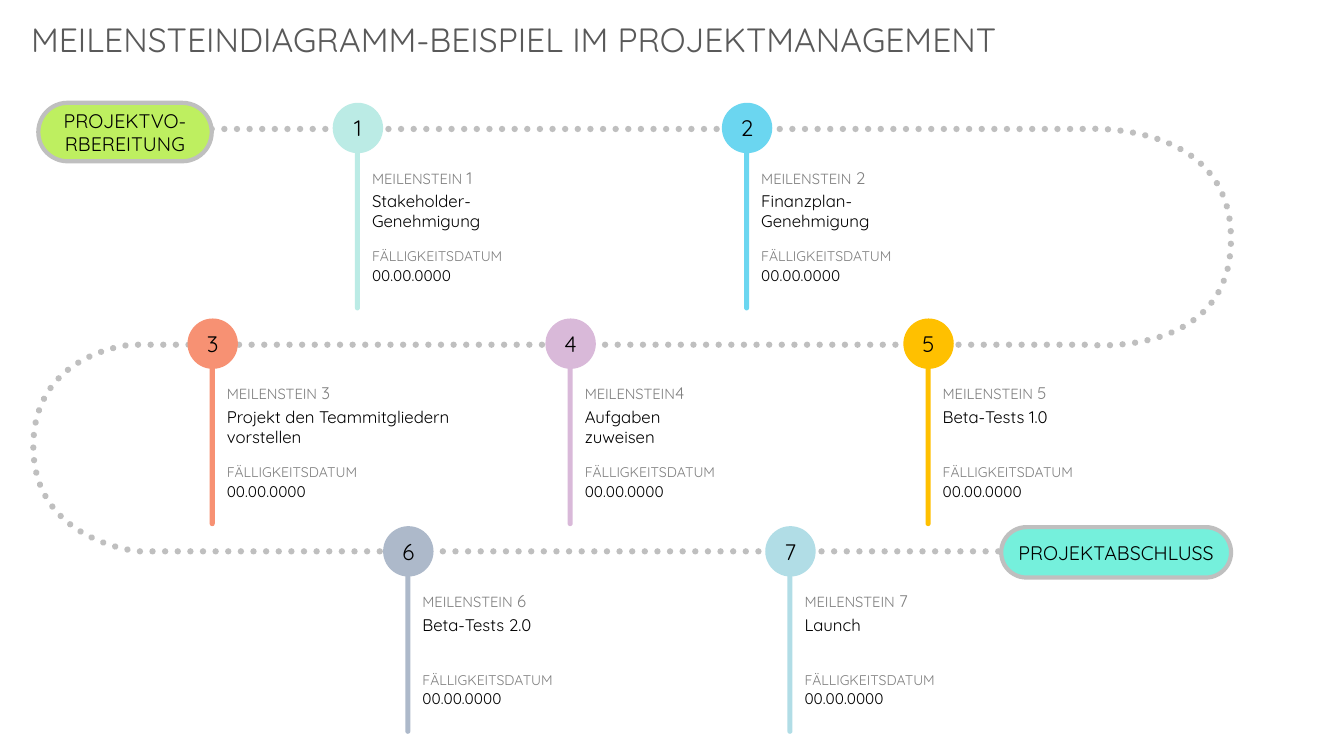
from lxml import etree
from pptx import Presentation
from pptx.dml.color import RGBColor
from pptx.enum.dml import MSO_LINE
from pptx.enum.shapes import MSO_SHAPE
from pptx.enum.text import MSO_ANCHOR, PP_ALIGN
from pptx.util import Inches, Pt

ROUNDED, CIRCLE = MSO_SHAPE.ROUNDED_RECTANGLE, MSO_SHAPE.OVAL
MIDDLE, CENTER = MSO_ANCHOR.MIDDLE, PP_ALIGN.CENTER
ROUND_DOT = MSO_LINE.ROUND_DOT
FONT = "Quicksand"
BLACK, GREY, TITLE_GREY, PATH_GREY = "000000", "808080", "595959", "BFBFBF"

TITLE = "MEILENSTEINDIAGRAMM-BEISPIEL IM PROJEKTMANAGEMENT"
DUE_LABEL, DUE_DATE = "FÄLLIGKEITSDATUM", "00.00.0000"
TERMINALS = [
    ("PROJEKTVO-RBEREITUNG", (0.38, 1.02, 1.72, 0.58), "BEEF60"),
    ("PROJEKTABSCHLUSS", (9.93, 5.23, 2.28, 0.5), "75F0DC"),
]
ROW_TOPS = (1.02, 3.16, 5.22)
MILESTONES = [
    ("1", " ", "Stakeholder-Genehmigung", 0, 3.3, 1.37, "BBEBE5"),
    ("2", " ", "Finanzplan-Genehmigung", 0, 7.16, 1.37, "6BD6F0"),
    ("3", " ", "Projekt den Teammitgliedern vorstellen", 1, 1.86, 2.34, "F79173"),
    ("4", "", "Aufgaben zuweisen", 1, 5.41, 1.37, "D9B9D9"),
    ("5", " ", "Beta-Tests 1.0", 1, 8.96, 1.37, "FFC000"),
    ("6", " ", "Beta-Tests 2.0", 2, 3.8, 1.37, "ADB9CA"),
    ("7", " ", "Launch", 2, 7.59, 1.37, "B1DDE6"),
]
ROUTE_START = (2.1, 1.28)
ROUTE = [
    [(10.73, 1.28)],
    [(10.73, 1.28), (12.21, 1.17), (12.21, 2.37)],
    [(12.21, 3.57), (10.78, 3.42), (10.78, 3.42)],
    [(1.31, 3.42)],
    [(1.31, 3.42), (0.33, 3.49), (0.33, 4.43)],
    [(0.33, 5.37), (1.37, 5.47), (1.37, 5.47)],
    [(10.28, 5.47)],
]
CURVE_STEPS = 32
NO_MARGINS = dict.fromkeys(
    ("margin_left", "margin_top", "margin_right", "margin_bottom"), 0)


def color(hex_value):
    return RGBColor.from_string(hex_value)


def write(shape, runs, align=None, **frame_format):
    frame = shape.text_frame
    for key, value in {"word_wrap": True, **frame_format}.items():
        setattr(frame, key, value)
    paragraph = frame.paragraphs[0]
    paragraph.alignment = align
    for text, size, ink in runs:
        run = paragraph.add_run()
        run.text = text
        for key, value in {"name": FONT, "size": Pt(size)}.items():
            setattr(run.font, key, value)
        run.font.color.rgb = color(ink)


def add_text(shapes, box, runs, **frame_format):
    write(shapes.add_textbox(*map(Inches, box)), runs, **frame_format)


def add_filled(shapes, kind, box, fill, outline=None):
    shape = shapes.add_shape(kind, *map(Inches, box))
    shape.shadow.inherit = False
    shape.fill.solid()
    shape.fill.fore_color.rgb = color(fill)
    if kind == ROUNDED:
        shape.adjustments[0] = 0.5
    if outline:
        shape.line.color.rgb = color(outline)
        shape.line.width = Pt(3)
    else:
        shape.line.fill.background()
    return shape


def route_points():
    points, here = [], ROUTE_START
    for segment in ROUTE:
        if len(segment) == 1:
            points += segment
        else:
            anchors = [here, *segment]
            for step in range(1, CURVE_STEPS + 1):
                t = step / CURVE_STEPS
                weights = ((1 - t) ** 3, 3 * t * (1 - t) ** 2,
                           3 * t * t * (1 - t), t ** 3)
                points.append(tuple(
                    sum(w * anchor[axis] for w, anchor in zip(weights, anchors))
                    for axis in (0, 1)))
        here = segment[-1]
    return points


def add_route(shapes):
    builder = shapes.build_freeform(*map(Inches, ROUTE_START))
    builder.add_line_segments(
        [(Inches(x), Inches(y)) for x, y in route_points()], close=False)
    route = builder.convert_to_shape()
    route.shadow.inherit = False
    route.fill.background()
    route.line.color.rgb = color(PATH_GREY)
    route.line.width = Pt(4.5)
    route.line.dash_style = ROUND_DOT
    route.line._get_or_add_ln().set("cap", "rnd")


def add_milestone(slide, number, gap, task, row, left, task_width, fill):
    shapes = slide.shapes.add_group_shape().shapes
    top = ROW_TOPS[row]
    add_filled(shapes, ROUNDED, (left + 0.22, top + 0.19, 0.05, 1.87), fill)
    heading = [("MEILENSTEIN", 10.5, GREY), (gap, 11, GREY), (number, 12, GREY)]
    details = [
        (0.64, 1.17, 0.26, [run for run in heading if run[0]]),
        (0.875, task_width, 0.57, [(task, 12, BLACK)]),
        (1.44, 1.87, 0.2, [(DUE_LABEL, 10, GREY)]),
        (1.62, 0.9, 0.26, [(DUE_DATE, 11, BLACK)]),
    ]
    for offset, width, height, runs in details:
        add_text(shapes, (left + 0.39, top + offset, width, height), runs, **NO_MARGINS)
    badge = add_filled(shapes, CIRCLE, (left, top, 0.5, 0.5), fill)
    write(badge, [(number, 16, BLACK)], CENTER, vertical_anchor=MIDDLE, **NO_MARGINS)


def main():
    deck = Presentation()
    deck.slide_width, deck.slide_height = Inches(13.33), Inches(7.5)
    slide = deck.slides.add_slide(deck.slide_layouts[6])
    add_text(slide.shapes, (0.21, 0.14, 10.31, 0.5), [(TITLE, 24, TITLE_GREY)])
    add_route(slide.shapes)
    for label, box, fill in TERMINALS:
        terminal = add_filled(slide.shapes, ROUNDED, box, fill, PATH_GREY)
        write(terminal, [(label, 14, BLACK)], CENTER, vertical_anchor=MIDDLE, **NO_MARGINS)
    for milestone in MILESTONES:
        add_milestone(slide, *milestone)
    deck.save("out.pptx")


if __name__ == "__main__":
    main()
